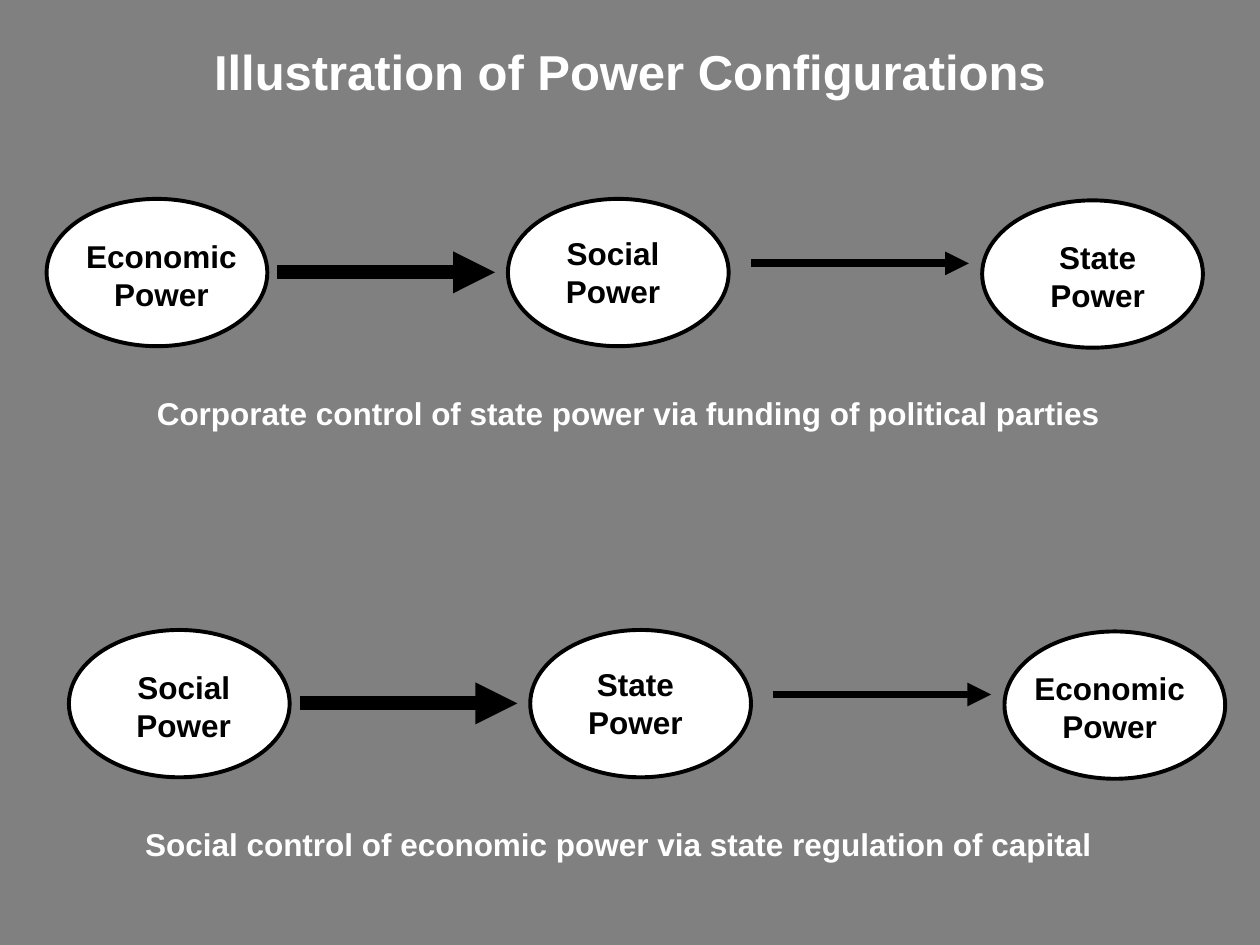
from dataclasses import dataclass

from lxml.etree import SubElement
from pptx import Presentation
from pptx.dml.color import RGBColor
from pptx.enum.shapes import MSO_CONNECTOR, MSO_SHAPE
from pptx.enum.text import PP_ALIGN
from pptx.oxml.ns import qn
from pptx.util import Cm, Pt


@dataclass(frozen=True)
class Theme:
    background: RGBColor = RGBColor(0x80, 0x80, 0x80)
    light: RGBColor = RGBColor(0xFF, 0xFF, 0xFF)
    dark: RGBColor = RGBColor(0x00, 0x00, 0x00)
    font: str = "Arial"
    title_size: Pt = Pt(28)
    body_size: Pt = Pt(18)
    outline: Pt = Pt(2.25)
    strong_arrow: Pt = Pt(8)
    weak_arrow: Pt = Pt(4.5)


@dataclass(frozen=True)
class Label:
    lines: tuple
    left: float
    top: float
    width: float


THEME = Theme()
SLIDE_WIDTH, SLIDE_HEIGHT = 25.4, 19.05
OVAL_WIDTH, OVAL_HEIGHT = 4.45, 2.97
OVAL_PLACES = ((0.94, 4.01), (10.24, 4.01), (19.8, 4.04))
ARROWS = ((5.59, 5.49, THEME.strong_arrow), (15.14, 5.31, THEME.weak_arrow))
ARROW_LENGTH = 4.39

CORPORATE_CONTROL = (
    Label(("Economic", "Power"), 0.41, 0.64, 3.81),
    Label(("Social Power",), 0.43, 0.58, 3.38),
    Label(("State Power",), 0.64, 0.64, 3.38),
)
SOCIAL_CONTROL = (
    Label(("Social", "Power"), 0.41, 0.64, 3.81),
    Label(("State Power",), 0.43, 0.58, 3.38),
    Label(("Economic Power",), 0.2, 0.64, 3.84),
)


def add_text(shapes, lines, left, top, width, height, size, color):
    box = shapes.add_textbox(Cm(left), Cm(top), Cm(width), Cm(height))
    frame = box.text_frame
    frame.word_wrap = True
    frame.text = "\n".join(lines)
    for para in frame.paragraphs:
        para.alignment = PP_ALIGN.CENTER
        para.font.name = THEME.font
        para.font.size = size
        para.font.bold = True
        para.font.color.rgb = color
    return box


def add_power(slide, label, left, top):
    group = slide.shapes.add_group_shape()
    oval = group.shapes.add_shape(
        MSO_SHAPE.OVAL, Cm(left), Cm(top), Cm(OVAL_WIDTH), Cm(OVAL_HEIGHT)
    )
    oval.shadow.inherit = False
    oval.fill.solid()
    oval.fill.fore_color.rgb = THEME.light
    oval.line.color.rgb = THEME.dark
    oval.line.width = THEME.outline
    add_text(group.shapes, label.lines, left + label.left, top + label.top,
             label.width, 1.73, THEME.body_size, THEME.dark)


def add_arrow(slide, left, top, weight):
    arrow = slide.shapes.add_connector(
        MSO_CONNECTOR.STRAIGHT, Cm(left), Cm(top), Cm(left + ARROW_LENGTH), Cm(top)
    )
    arrow.line.color.rgb = THEME.dark
    arrow.line.width = weight
    properties = arrow.element.spPr
    SubElement(properties.find(qn("a:ln")), qn("a:tailEnd"), type="triangle")
    SubElement(properties, qn("a:effectLst"))


def add_configuration(slide, labels, caption, caption_left, shift_x, shift_y):
    add_text(slide.shapes, (caption,), caption_left, 7.82 + shift_y,
             SLIDE_WIDTH, 1.8, THEME.body_size, THEME.light)
    for label, (left, top) in zip(labels, OVAL_PLACES):
        add_power(slide, label, left + shift_x, top + shift_y)
    for left, top, weight in ARROWS:
        add_arrow(slide, left + shift_x, top + shift_y, weight)


def main():
    deck = Presentation()
    deck.slide_width, deck.slide_height = Cm(SLIDE_WIDTH), Cm(SLIDE_HEIGHT)
    page = deck.slides.add_slide(deck.slide_layouts[6])
    page.background.fill.solid()
    page.background.fill.fore_color.rgb = THEME.background

    title = add_text(page.shapes, ("Illustration of Power Configurations",),
                     0, 0.64, SLIDE_WIDTH, 1.45, THEME.title_size, THEME.light)
    title.text_frame.margin_top = Cm(0.2)
    add_configuration(
        page, CORPORATE_CONTROL,
        "Corporate control of state power via funding of political parties",
        -0.03, 0, 0)
    add_configuration(
        page, SOCIAL_CONTROL,
        "Social control of economic power via state regulation of capital",
        -0.23, 0.45, 8.69)
    deck.save("out.pptx")


if __name__ == "__main__":
    main()
